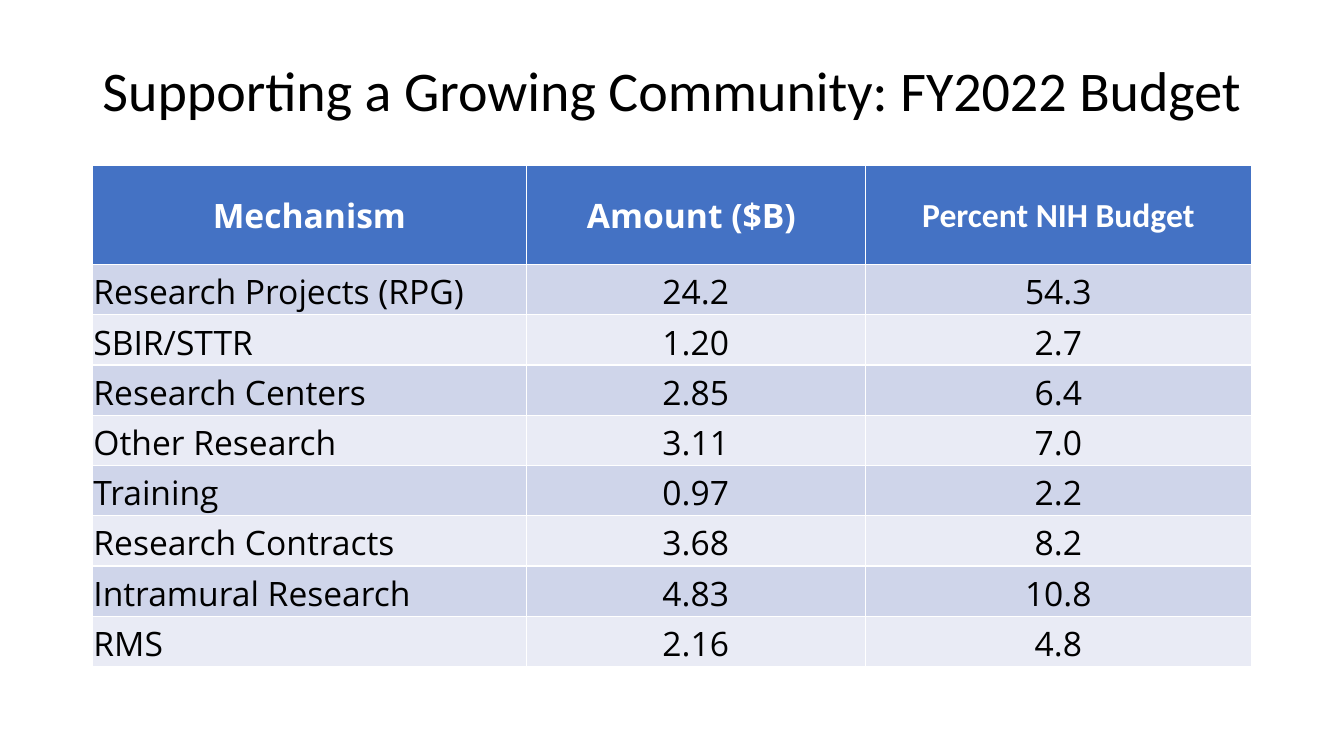
from dataclasses import dataclass

import pptx
import pptx.dml.color
import pptx.enum.text
import pptx.util

Pt = pptx.util.Pt
RGB = pptx.dml.color.RGBColor.from_string
ALIGN = pptx.enum.text.PP_ALIGN
ANCHOR = pptx.enum.text.MSO_ANCHOR


@dataclass(frozen=True)
class Theme:
    text: str = "000000"
    header_text: str = "FFFFFF"
    header_fill: str = "4472C4"
    bands: tuple = ("CFD5EA", "E9EBF5")
    title_font: str = "Calibri"
    table_font: str = "Open Sans"
    title_size: int = 40
    table_size: int = 24


THEME = Theme()

TITLE = "Supporting a Growing Community: FY2022 Budget"
HEADERS = ("Mechanism", "Amount ($B) ", "Percent NIH Budget")
HEADER_FONTS = (THEME.table_font, THEME.table_font, THEME.title_font)
BUDGET = (
    ("Research Projects (RPG)", "24.2", "54.3"),
    ("SBIR/STTR", "1.20", "2.7"),
    ("Research Centers", "2.85", "6.4"),
    ("Other Research", "3.11", "7.0"),
    ("Training", "0.97", "2.2"),
    ("Research Contracts", "3.68", "8.2"),
    ("Intramural Research", "4.83", "10.8"),
    ("RMS", "2.16", "4.8"),
)
COLUMN_SHARES = (310, 242, 276)
HEADER_HEIGHT = 70.5


def set_attributes(target, formats):
    for name, value in formats.items():
        setattr(target, name, value)


def write_text(tf, text, align, color, **font):
    p = tf.paragraphs[0]
    p.alignment = align
    r = p.add_run()
    r.text = text
    set_attributes(r.font, font)
    r.font.color.rgb = RGB(color)
    return p


def add_title(s, left, top, width, height):
    sp = s.shapes.title
    set_attributes(sp, {"left": Pt(left), "top": Pt(top),
                        "width": Pt(width), "height": Pt(height)})
    tf = sp.text_frame
    set_attributes(tf, {"word_wrap": True, "vertical_anchor": ANCHOR.MIDDLE,
                        "auto_size": pptx.enum.text.MSO_AUTO_SIZE.NONE})
    p = write_text(tf, TITLE, ALIGN.LEFT, THEME.text,
                   name=THEME.title_font, size=Pt(THEME.title_size))
    p.line_spacing = 0.9


def fill_cell(cell, text, fill, anchor, align, color, font, bold):
    set_attributes(cell, {"margin_left": Pt(0.75), "margin_right": Pt(0.75),
                          "margin_top": Pt(0.75), "margin_bottom": 0,
                          "vertical_anchor": anchor})
    cell.fill.solid()
    cell.fill.fore_color.rgb = RGB(fill)
    write_text(cell.text_frame, text, align, color,
               name=font, size=Pt(THEME.table_size), bold=bold)


def add_budget_table(s, left, top, width, height):
    """Place the table; its default style supplies the white cell borders."""
    table = s.shapes.add_table(len(BUDGET) + 1, len(HEADERS), Pt(left), Pt(top),
                               Pt(width), Pt(height)).table
    for column, share in zip(table.columns, COLUMN_SHARES):
        column.width = Pt(width * share / sum(COLUMN_SHARES))
    for i, row in enumerate(table.rows):
        row.height = Pt((height - HEADER_HEIGHT) / len(BUDGET) if i else HEADER_HEIGHT)

    for j, (text, font) in enumerate(zip(HEADERS, HEADER_FONTS)):
        fill_cell(table.cell(0, j), text, THEME.header_fill, ANCHOR.MIDDLE,
                  ALIGN.CENTER, THEME.header_text, font, True)
    for i, values in enumerate(BUDGET):
        band = THEME.bands[i % len(THEME.bands)]
        for j, text in enumerate(values):
            fill_cell(table.cell(i + 1, j), text, band, ANCHOR.BOTTOM,
                      ALIGN.CENTER if j else ALIGN.LEFT,
                      THEME.text, THEME.table_font, False)


def main():
    prs = pptx.Presentation()
    set_attributes(prs, {"slide_width": Pt(960), "slide_height": Pt(540)})
    s = prs.slides.add_slide(prs.slide_layouts.get_by_name("Title Only"))
    add_title(s, 66, 14.4, 828, 104.4)
    add_budget_table(s, 66, 118.4, 828, 357.8)
    prs.save("out.pptx")


if __name__ == "__main__":
    main()
